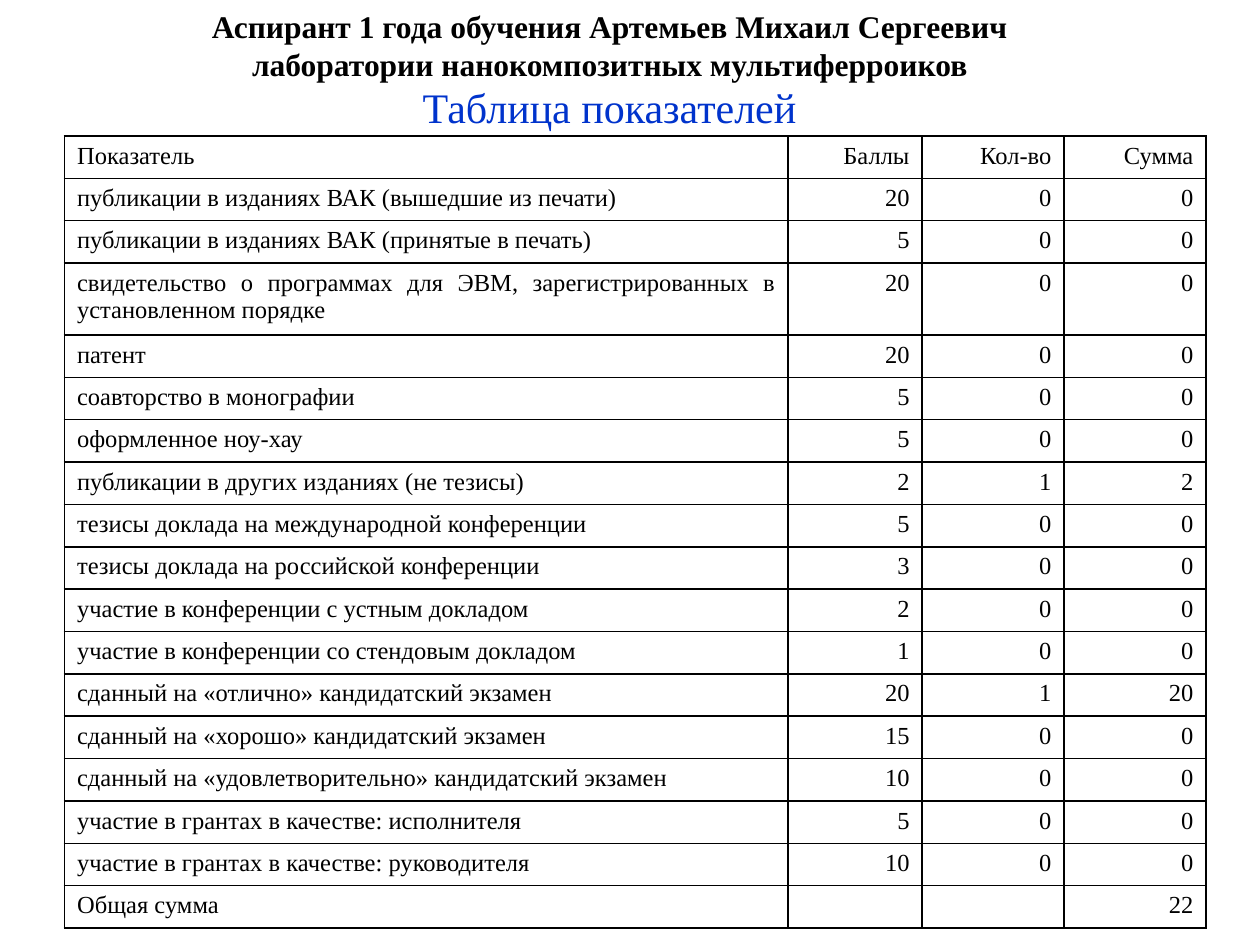
from lxml import etree
from pptx import Presentation
from pptx.dml.color import RGBColor
from pptx.enum.text import MSO_ANCHOR, PP_ALIGN
from pptx.oxml.ns import qn
from pptx.util import Cm, Pt

LEFT, MID, RIGHT = PP_ALIGN.JUSTIFY, PP_ALIGN.CENTER, PP_ALIGN.RIGHT
TOP, CENTER = MSO_ANCHOR.TOP, MSO_ANCHOR.MIDDLE
FONT = "Times New Roman"
BLACK, BLUE = "000000", "0033CC"

# Headings: text, box in cm, anchor, colour, font format
HEADS = [
    ("Аспирант 1 года обучения Артемьев Михаил Сергеевич\v"
     "лаборатории нанокомпозитных мультиферроиков",
     (1.5, 0, 21.59, 1.8), CENTER, BLACK, {"size": Pt(18), "bold": True}),
    ("Таблица показателей",
     (3.4, 1.52, 17.78, 1.2), TOP, BLUE, {"size": Pt(24)}),
]

# Table: indicator, points, count; the sum is worked out
HEADER = ("Показатель", "Баллы", "Кол-во", "Сумма")
TOTAL = "Общая сумма"
SCORES = [
    ("публикации в изданиях ВАК (вышедшие из печати)", 20, 0),
    ("публикации в изданиях ВАК (принятые в печать)", 5, 0),
    ("свидетельство о программах для ЭВМ, зарегистрированных "
     "в установленном порядке", 20, 0),
    ("патент", 20, 0),
    ("соавторство в монографии", 5, 0),
    ("оформленное ноу-хау", 5, 0),
    ("публикации в других изданиях (не тезисы)", 2, 1),
    ("тезисы доклада на международной конференции", 5, 0),
    ("тезисы доклада на российской конференции", 3, 0),
    ("участие в конференции с устным докладом", 2, 0),
    ("участие в конференции со стендовым докладом", 1, 0),
    ("сданный на «отлично» кандидатский экзамен", 20, 1),
    ("сданный на «хорошо» кандидатский экзамен", 15, 0),
    ("сданный на «удовлетворительно» кандидатский экзамен", 10, 0),
    ("участие в грантах в качестве: исполнителя", 5, 0),
    ("участие в грантах в качестве: руководителя", 10, 0),
]
GRID = (1.3, 2.74, 23.01, 15.97)
COLS = (14.59, 2.7, 2.86, 2.86)
TALL, TALL_ROW = 1.45, 3
CELL_FONT = {"size": Pt(14), "bold": False}


def paint(font, color):
    font.color.rgb = RGBColor.from_string(color)


def write(frame, text, align, color, style):
    para = frame.paragraphs[0]
    para.text = text
    para.alignment = align
    for run in para.runs:
        for name, value in {"name": FONT, **style}.items():
            setattr(run.font, name, value)
        paint(run.font, color)
    if not text:  # keeps an empty cell as low as its row
        end = para._p.get_or_add_endParaRPr()
        end.set("sz", str(int(style["size"].pt * 100)))


def border(cell):
    props = cell._tc.get_or_add_tcPr()
    for i, side in enumerate(("lnL", "lnR", "lnT", "lnB")):
        line = etree.Element(qn("a:" + side), w=str(Pt(1)))
        fill = etree.SubElement(line, qn("a:solidFill"))
        etree.SubElement(fill, qn("a:srgbClr"), val=BLACK)
        props.insert(i, line)


def add_heads(slide):
    for text, box, anchor, color, style in HEADS:
        frame = slide.shapes.add_textbox(*map(Cm, box)).text_frame
        frame.word_wrap = True
        frame.vertical_anchor = anchor
        write(frame, text, MID, color, style)


def add_grid(slide):
    body = [(name, pts, num, pts * num) for name, pts, num in SCORES]
    total = (TOTAL, "", "", sum(row[-1] for row in body))
    rows = [HEADER, *body, total]
    table = slide.shapes.add_table(
        len(rows), len(COLS), *map(Cm, GRID)).table
    table.first_row = table.horz_banding = False
    for col, width in zip(table.columns, COLS):
        col.width = Cm(width)

    # Equal rows share what the two-line row leaves
    low = (GRID[3] - TALL) / (len(rows) - 1)
    for r, row in enumerate(rows):
        table.rows[r].height = Cm(TALL if r == TALL_ROW else low)
        for c, value in enumerate(row):
            cell = table.cell(r, c)
            cell.fill.background()
            border(cell)
            write(cell.text_frame, str(value), RIGHT if c else LEFT,
                  BLACK, CELL_FONT)


def main():
    deck = Presentation()
    deck.slide_width, deck.slide_height = Cm(25.4), Cm(19.05)
    slide = deck.slides.add_slide(deck.slide_layouts[6])
    add_heads(slide)
    add_grid(slide)
    deck.save("out.pptx")


if __name__ == "__main__":
    main()
